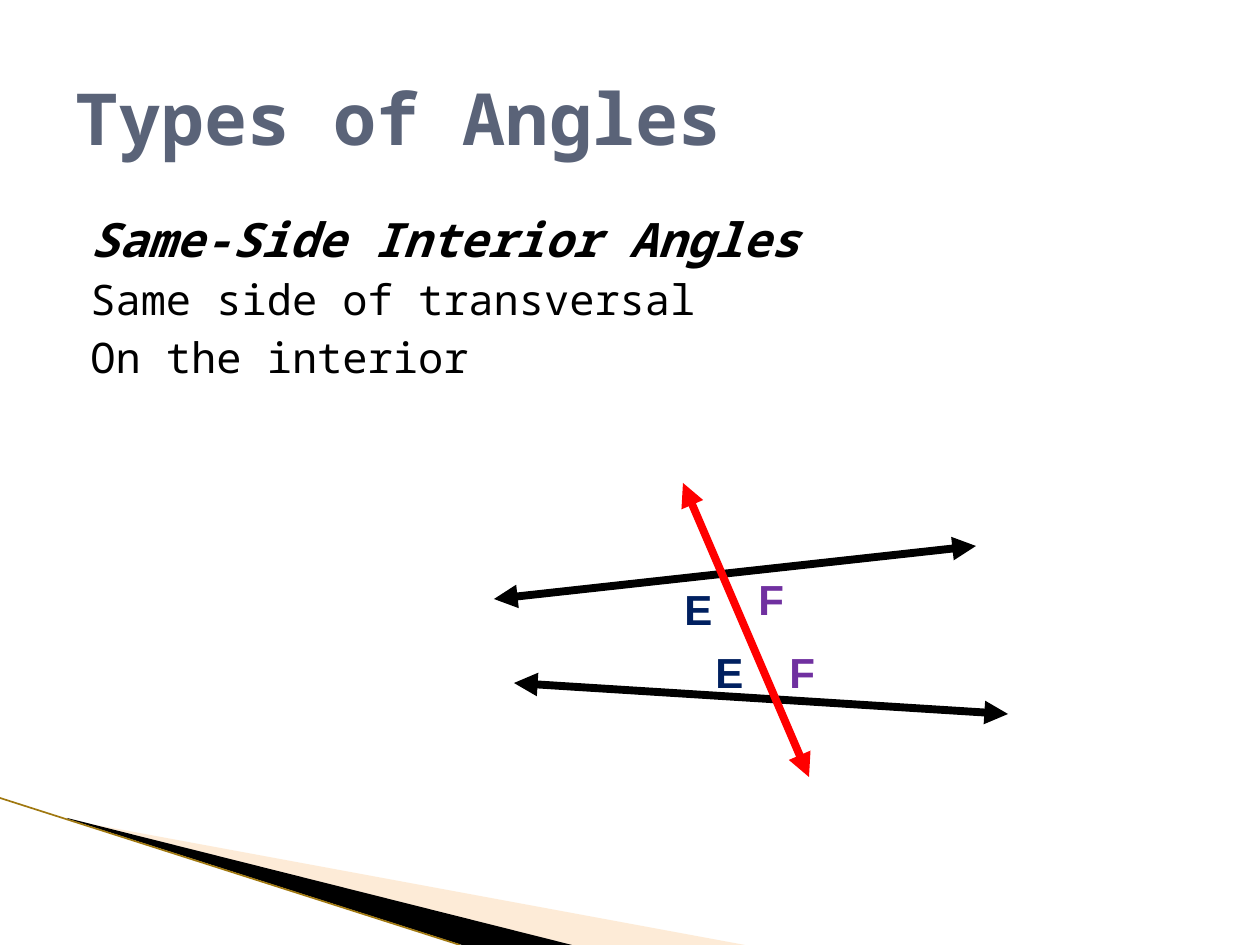
from lxml import etree
from pptx import Presentation
from pptx.dml.color import RGBColor
from pptx.enum import shapes, text
from pptx.oxml.ns import qn
from pptx.util import Pt

PX = 914400 / 126
BLACK = RGBColor(0, 0, 0)
RED = RGBColor(0xFF, 0, 0)
SLATE = RGBColor(0x5A, 0x63, 0x78)
NAVY = RGBColor(0, 0x20, 0x60)
PURPLE = RGBColor(0x70, 0x30, 0xA0)
PEACH = RGBColor(0xFC, 0xCF, 0x9B)
GOLD = RGBColor(0xA0, 0x78, 0x10)
MONO = "Noto Sans Mono"

TITLE = "Types of Angles"
BODY = [  # words, size, bold italic
    ("Same-Side Interior Angles", 27, True),
    ("Same side of transversal", 24, False),
    ("On the interior", 24, False),
]
WEDGES = [  # corners, colour, opacity in percent
    ([(69, 820), (745, 945), (571, 945), (69, 819)], PEACH, 40),
    ([(67, 818), (572, 945), (462, 945), (68, 819)], BLACK, 100),
]
EDGE = (0, 798, 460, 945)
LINES = [  # ends, colour
    ((494, 599, 976, 546), BLACK),
    ((514, 683, 1008, 714), BLACK),
    ((683, 483, 809, 777), RED),
]
LABELS = [  # letter, left, top, width, colour
    ("E", 672, 577, 54, NAVY),
    ("E", 703, 640, 54, NAVY),
    ("F", 777, 640, 52, PURPLE),
    ("F", 746, 567, 52, PURPLE),
]


def px(*nums):
    return [round(n * PX) for n in nums]


def style(para, size, color, name, bold=True, italic=False):
    font = para.font
    font.size, font.name = Pt(size), name
    font.bold, font.italic = bold, italic
    font.color.rgb = color


def wedge(slide, points, color, alpha):
    pen = slide.shapes.build_freeform(*points[0], scale=PX)
    pen.add_line_segments(points[1:], close=True)
    shape = pen.convert_to_shape()
    shape.shadow.inherit = False
    shape.line.fill.background()
    shape.fill.solid()
    shape.fill.fore_color.rgb = color
    if alpha < 100:
        fill = shape.fill._xPr.find(qn("a:solidFill"))
        etree.SubElement(fill[0], qn("a:alpha"), val=str(alpha * 1000))


def draw_line(slide, ends, color, width, arrows=False):
    line = slide.shapes.add_connector(shapes.MSO_CONNECTOR.STRAIGHT, *px(*ends))
    line.line.color.rgb = color
    line.line.width = Pt(width)
    if arrows:
        for tag in ("a:headEnd", "a:tailEnd"):
            etree.SubElement(line.line._ln, qn(tag), type="triangle")
    etree.SubElement(line._element.spPr, qn("a:effectLst"))


def add_text(slide, box, wrap):
    frame = slide.shapes.add_textbox(*px(*box)).text_frame
    frame.word_wrap = wrap
    return frame


def main():
    prs = Presentation()
    prs.slide_width, prs.slide_height = px(1260, 945)
    slide = prs.slides.add_slide(prs.slide_layouts[5])

    for points, color, alpha in WEDGES:
        wedge(slide, points, color, alpha)
    draw_line(slide, EDGE, GOLD, 0.95)

    title = slide.shapes.title
    title.left, title.top, title.width, title.height = px(63, 38, 1134, 158)
    title.text_frame.text = TITLE
    title.text_frame.vertical_anchor = text.MSO_ANCHOR.MIDDLE
    head = title.text_frame.paragraphs[0]
    head.alignment = text.PP_ALIGN.LEFT
    style(head, 41, SLATE, MONO)

    frame = add_text(slide, (63, 204, 1134, 624), True)
    indent, hang = px(50, -35)
    for i, (words, size, strong) in enumerate(BODY):
        para = frame.add_paragraph() if i else frame.paragraphs[0]
        para.text = words
        props = para._p.get_or_add_pPr()
        props.set("marL", str(indent))
        props.set("indent", str(hang))
        if i:
            para.space_before = Pt(4)
        style(para, size, BLACK, MONO, strong, strong)

    for ends, color in LINES:
        draw_line(slide, ends, color, 4.5, arrows=True)
    for letter, left, top, width, color in LABELS:
        frame = add_text(slide, (left, top, width, 63), False)
        frame.auto_size = text.MSO_AUTO_SIZE.SHAPE_TO_FIT_TEXT
        frame.text = letter
        style(frame.paragraphs[0], 24, color, "Arial")

    prs.save("out.pptx")


if __name__ == "__main__":
    main()
